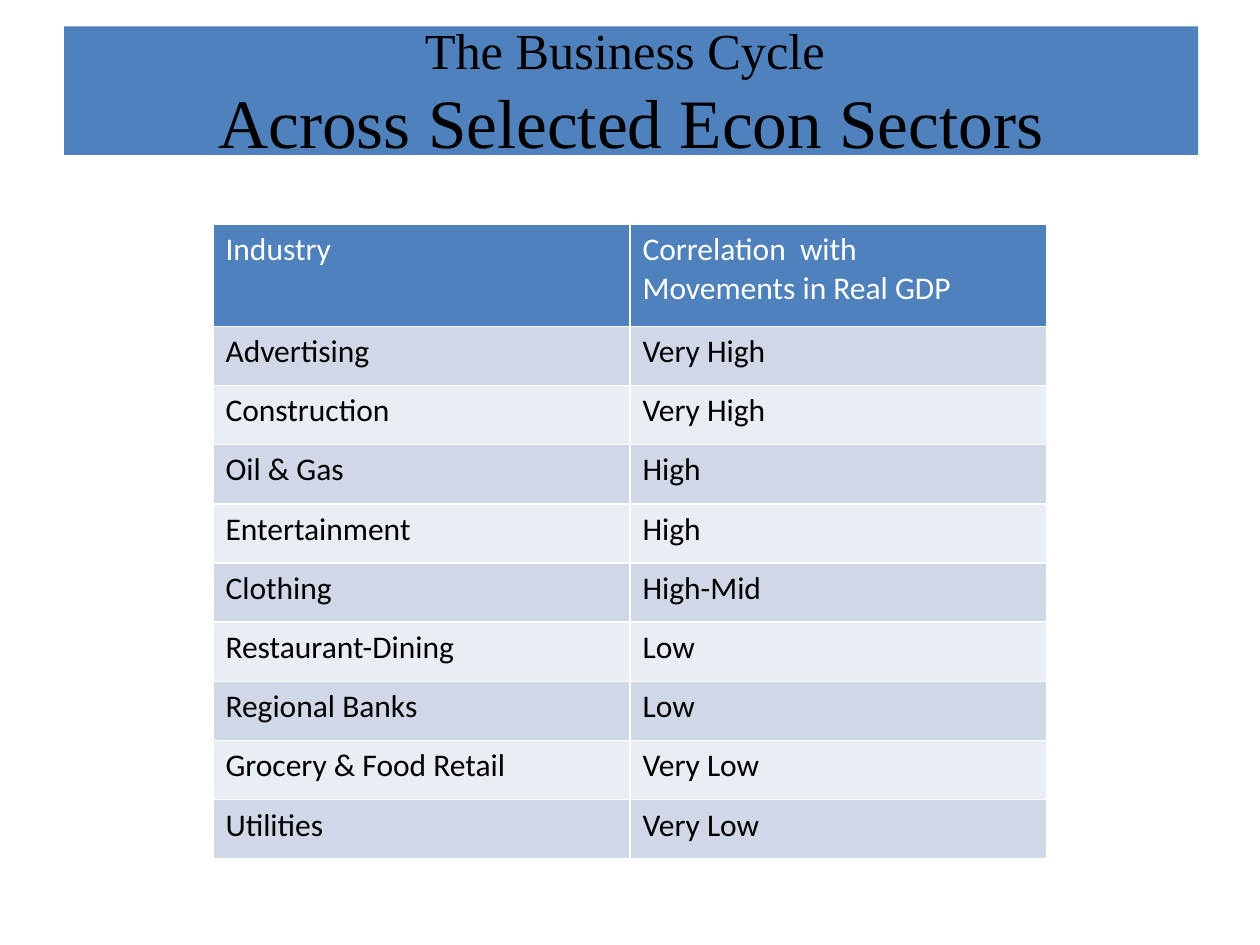
import lxml.etree
import pptx
import pptx.dml.color
import pptx.enum.text
import pptx.oxml.ns
import pptx.util

TITLE_LINES = ["The Business Cycle ", "Across Selected Econ Sectors"]
HEADER = ("Industry", "Correlation  with\nMovements in Real GDP")
SECTORS = [
    ("Advertising", "Very High"),
    ("Construction", "Very High"),
    ("Oil & Gas", "High"),
    ("Entertainment", "High"),
    ("Clothing", "High-Mid"),
    ("Restaurant-Dining", "Low"),
    ("Regional Banks", "Low"),
    ("Grocery & Food Retail", "Very Low"),
    ("Utilities", "Very Low"),
]

THEME = {
    "accent": "4F81BD",
    "bands": ("D0D8E8", "E9EDF4"),
    "dark": "000000",
    "light": "FFFFFF",
    "title_font": "Times New Roman",
    "table_font": "Calibri",
    "title_sizes": (28.8, 39.6),
    "table_size": 18,
}

Inches = pptx.util.Inches
COLUMN_WIDTH = Inches(3.31)
HEADER_HEIGHT = Inches(0.81)
ROW_HEIGHT = Inches(0.47)


def paint(target, color):
    target.fill.solid()
    target.fill.fore_color.rgb = pptx.dml.color.RGBColor.from_string(color)


def style_run(run, font, size, color):
    run.font.name = font
    run.font.size = pptx.util.Pt(size)
    run.font.bold = False
    run.font.color.rgb = pptx.dml.color.RGBColor.from_string(color)


def add_title(page):
    title = page.shapes.title
    title.left, title.top = Inches(0.51), Inches(0.21)
    title.width, title.height = Inches(9), Inches(1.02)
    paint(title, THEME["accent"])
    frame = title.text_frame
    frame.text = "\v".join(TITLE_LINES)
    frame.word_wrap = True
    frame.auto_size = pptx.enum.text.MSO_AUTO_SIZE.NONE
    frame.vertical_anchor = pptx.enum.text.MSO_ANCHOR.MIDDLE
    para = frame.paragraphs[0]
    para.alignment = pptx.enum.text.PP_ALIGN.CENTER
    for run, size in zip(para.runs, THEME["title_sizes"]):
        style_run(run, THEME["title_font"], size, THEME["dark"])
    line_break = para._p.find(pptx.oxml.ns.qn("a:br"))
    properties = lxml.etree.SubElement(line_break, pptx.oxml.ns.qn("a:rPr"))
    properties.set("sz", str(round(THEME["title_sizes"][0] * 100)))


def add_sector_table(page):
    rows = [HEADER] + SECTORS
    columns = len(HEADER)
    table = page.shapes.add_table(
        len(rows), columns, Inches(1.69), Inches(1.78),
        COLUMN_WIDTH * columns, HEADER_HEIGHT + ROW_HEIGHT * len(SECTORS),
    ).table
    for column in table.columns:
        column.width = COLUMN_WIDTH
    for index, values in enumerate(rows):
        is_header = index == 0
        table.rows[index].height = HEADER_HEIGHT if is_header else ROW_HEIGHT
        fill = THEME["accent"] if is_header else THEME["bands"][(index - 1) % 2]
        color = THEME["light"] if is_header else THEME["dark"]
        for cell, value in zip(table.rows[index].cells, values):
            paint(cell, fill)
            cell.text_frame.text = value
            for para in cell.text_frame.paragraphs:
                for run in para.runs:
                    style_run(run, THEME["table_font"], THEME["table_size"], color)


def main():
    deck = pptx.Presentation()
    deck.slide_width, deck.slide_height = Inches(10), Inches(7.5)
    page = deck.slides.add_slide(deck.slide_layouts.get_by_name("Title Only"))
    add_title(page)
    add_sector_table(page)
    deck.save("out.pptx")


if __name__ == "__main__":
    main()
